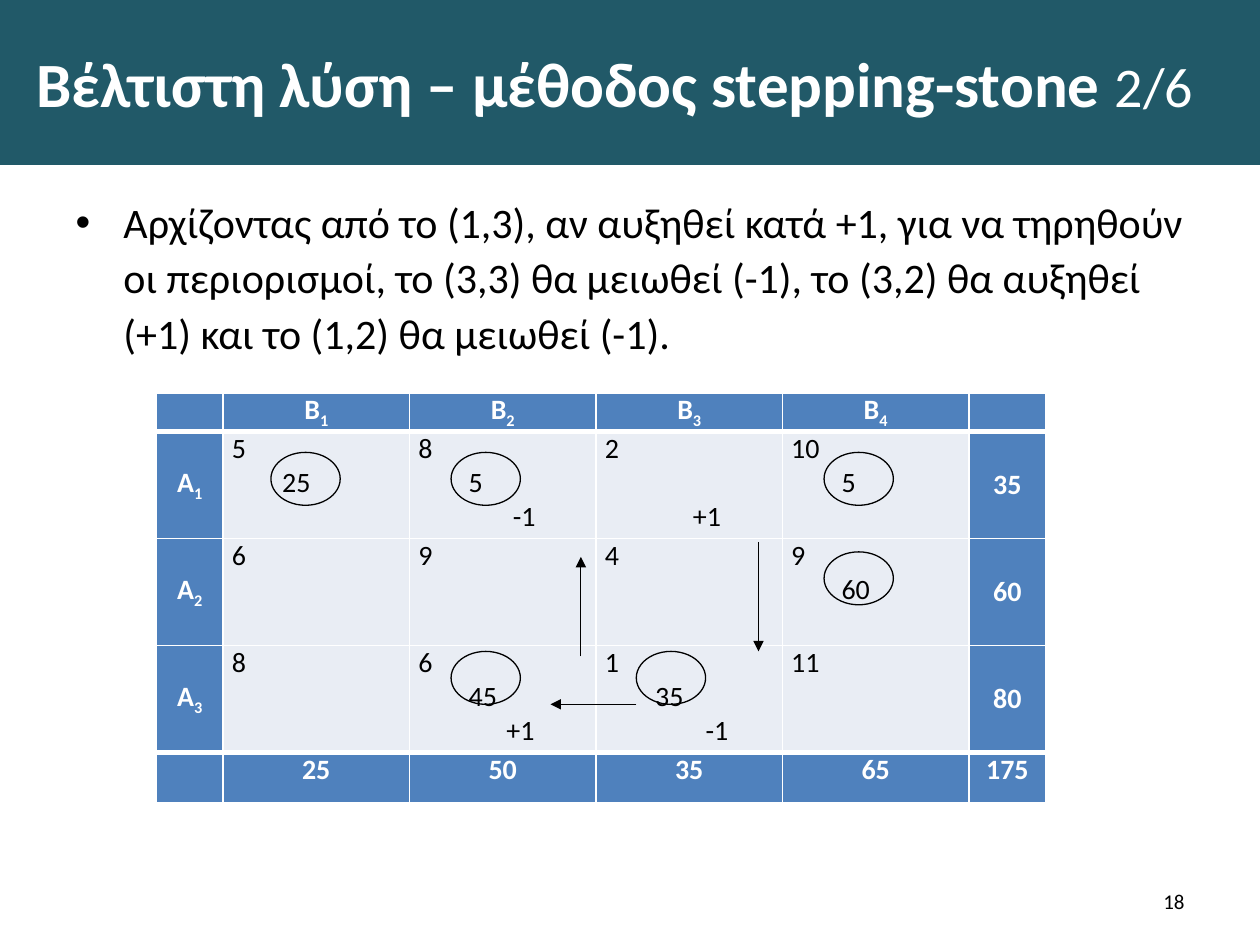
from lxml import etree
from pptx import Presentation
from pptx.dml.color import RGBColor
from pptx.enum.shapes import MSO_CONNECTOR, MSO_SHAPE
from pptx.enum.text import MSO_ANCHOR, MSO_AUTO_SIZE, PP_ALIGN
from pptx.oxml.ns import qn
from pptx.util import Inches, Pt

STRAIGHT, OVAL = MSO_CONNECTOR.STRAIGHT, MSO_SHAPE.OVAL
TOP, MIDDLE = MSO_ANCHOR.TOP, MSO_ANCHOR.MIDDLE
NO_AUTOFIT = MSO_AUTO_SIZE.NONE
LEFT, CENTER, RIGHT = PP_ALIGN.LEFT, PP_ALIGN.CENTER, PP_ALIGN.RIGHT

FONT = "Calibri"
TEAL, BLUE, PALE = "215968", "4F81BD", "E9EDF4"
WHITE, BLACK = "FFFFFF", "000000"

COLUMN_WIDTHS = [0.53, 1.48, 1.48, 1.48, 1.48, 0.61]
ROW_HEIGHTS = [0.3, 0.85, 0.85, 0.85, 0.4]
SUPPLY = [35, 60, 80]
DEMAND = [25, 50, 35, 65, 175]
COSTS = [[5, 8, 2, 10], [6, 9, 4, 9], [8, 6, 1, 11]]
SHIPMENTS = {(1, 1): 25, (1, 2): 5, (1, 4): 5, (2, 4): 60, (3, 2): 45, (3, 3): 35}
CHANGES = {(1, 2): ("-1", 0.75), (1, 3): ("+1", 0.7),
           (3, 2): ("+1", 0.7), (3, 3): ("-1", 0.8)}
CIRCLES = [(2.15, 3.59), (3.58, 3.59), (6.54, 3.59),
           (6.54, 4.38), (3.58, 5.17), (5.05, 5.17)]
ARROWS = [(6.02, 4.3, 6.02, 5.17), (5.05, 5.59, 4.37, 5.59), (4.61, 5.21, 4.61, 4.42)]


def rgb(value):
    return RGBColor.from_string(value)


def place(part, box):
    part.left, part.top, part.width, part.height = (Inches(v) for v in box)


def format_paragraph(paragraph, size, color, bold=False, align=LEFT):
    paragraph.alignment = align
    font = paragraph.font
    font.name, font.size, font.bold = FONT, Pt(size), bold
    font.color.rgb = rgb(color)


def indent(paragraph, left, first=0):
    properties = paragraph._p.get_or_add_pPr()
    properties.set("marL", str(Inches(left)))
    properties.set("indent", str(Inches(first)))
    return properties


def add_title(slide, box):
    title = slide.shapes.title
    place(title, box)
    title.fill.solid()
    title.fill.fore_color.rgb = rgb(TEAL)
    frame = title.text_frame
    frame.auto_size, frame.vertical_anchor = NO_AUTOFIT, MIDDLE
    heading = frame.paragraphs[0]
    indent(heading, 0.19)
    format_paragraph(heading, 36, WHITE, True)
    heading.add_run().text = "Βέλτιστη λύση – μέθοδος stepping-stone "
    part_number = heading.add_run()
    part_number.text = "2/6"
    part_number.font.size, part_number.font.bold = Pt(32), False


def add_explanation(slide, box):
    body = slide.placeholders[1]
    place(body, box)
    frame = body.text_frame
    frame.auto_size = NO_AUTOFIT
    explanation = frame.paragraphs[0]
    explanation.text = (
        "Αρχίζοντας από το (1,3), αν αυξηθεί κατά +1, για να τηρηθούν οι "
        "περιορισμοί, το (3,3) θα μειωθεί (-1), το (3,2) θα αυξηθεί (+1) "
        "και το (1,2) θα μειωθεί (-1).")
    explanation.line_spacing, explanation.space_before = 1.1, Pt(0)
    properties = indent(explanation, 0.38, -0.38)
    etree.SubElement(properties, qn("a:buFont"), typeface="Arial")
    etree.SubElement(properties, qn("a:buChar"), char="•")
    format_paragraph(explanation, 24, BLACK)


def style_cell(cell, fill, anchor, top=1, bottom=1):
    cell.margin_left = cell.margin_right = Inches(0.07)
    cell.margin_top = cell.margin_bottom = 0
    cell.vertical_anchor = anchor
    properties = cell._tc.get_or_add_tcPr()
    for side, width in (("L", 1), ("R", 1), ("T", top), ("B", bottom)):
        border = etree.SubElement(properties, qn(f"a:ln{side}"), w=str(Pt(width)))
        solid = etree.SubElement(border, qn("a:solidFill"))
        etree.SubElement(solid, qn("a:srgbClr"), val=WHITE)
    cell.fill.solid()
    cell.fill.fore_color.rgb = rgb(fill)


def fill_heading(cell, label="", subscript=""):
    paragraph = cell.text_frame.paragraphs[0]
    format_paragraph(paragraph, 16, WHITE, True, CENTER)
    if label:
        paragraph.add_run().text = str(label)
    if subscript:
        index = paragraph.add_run()
        index.text = str(subscript)
        index.font._element.set("baseline", "-25000")


def fill_route(cell, cost, shipment, change):
    frame = cell.text_frame
    lines = [(str(cost), 0)]
    if shipment is not None:
        lines.append((str(shipment), 0.4))
    if change:
        lines.append(change)
    for number, (text, offset) in enumerate(lines):
        paragraph = frame.add_paragraph() if number else frame.paragraphs[0]
        paragraph.text = text
        indent(paragraph, offset)
        if change and shipment is None and number:
            paragraph.space_before = Pt(19.5)
        format_paragraph(paragraph, 16, BLACK)


def add_transport_table(slide, box):
    table = slide.shapes.add_table(
        len(ROW_HEIGHTS), len(COLUMN_WIDTHS), *(Inches(v) for v in box)).table
    for column, width in zip(table.columns, COLUMN_WIDTHS):
        column.width = Inches(width)
    for row, height in zip(table.rows, ROW_HEIGHTS):
        row.height = Inches(height)
    last_row, last_column = len(ROW_HEIGHTS) - 1, len(COLUMN_WIDTHS) - 1
    for r in range(last_row + 1):
        for c in range(last_column + 1):
            cell = table.cell(r, c)
            inner_row, inner_column = 0 < r < last_row, 0 < c < last_column
            style_cell(cell, PALE if inner_row and inner_column else BLUE,
                       MIDDLE if inner_row and not inner_column else TOP,
                       3 if r in (1, last_row) else 1,
                       3 if r in (0, last_row - 1) else 1)
            if inner_row and inner_column:
                fill_route(cell, COSTS[r - 1][c - 1],
                           SHIPMENTS.get((r, c)), CHANGES.get((r, c)))
            elif r == 0 and inner_column:
                fill_heading(cell, "Β", c)
            elif inner_row and c == 0:
                fill_heading(cell, "Α", r)
            elif inner_row:
                fill_heading(cell, SUPPLY[r - 1])
            elif r == last_row and c:
                fill_heading(cell, DEMAND[c - 1])
            else:
                fill_heading(cell)


def add_stepping_path(slide):
    for left, top in CIRCLES:
        circle = slide.shapes.add_shape(
            OVAL, Inches(left), Inches(top), Inches(0.55), Inches(0.42))
        circle.shadow.inherit = False
        circle.fill.background()
        circle.line.color.rgb, circle.line.width = rgb(BLACK), Pt(0.75)
    for ends in ARROWS:
        arrow = slide.shapes.add_connector(STRAIGHT, *(Inches(v) for v in ends))
        arrow.line.color.rgb, arrow.line.width = rgb(BLACK), Pt(0.75)
        etree.SubElement(arrow.line._get_or_add_ln(), qn("a:tailEnd"), type="triangle")
        etree.SubElement(arrow._element.spPr, qn("a:effectLst"))


def add_page_number(slide, box):
    frame = slide.shapes.add_textbox(*(Inches(v) for v in box)).text_frame
    frame.word_wrap, frame.vertical_anchor = True, MIDDLE
    number = frame.paragraphs[0]
    number.text = "18"
    format_paragraph(number, 12, BLACK, align=RIGHT)


def main():
    presentation = Presentation()
    presentation.slide_width, presentation.slide_height = Inches(10), Inches(7.5)
    slide = presentation.slides.add_slide(presentation.slide_layouts[1])
    add_title(slide, (0, 0, 10, 1.31))
    add_explanation(slide, (0.5, 1.47, 9, 1.81))
    add_page_number(slide, (7.17, 6.95, 2.33, 0.4))
    add_transport_table(slide, (1.24, 3.12, 7.06, 3.25))
    add_stepping_path(slide)
    presentation.save("out.pptx")


if __name__ == "__main__":
    main()
